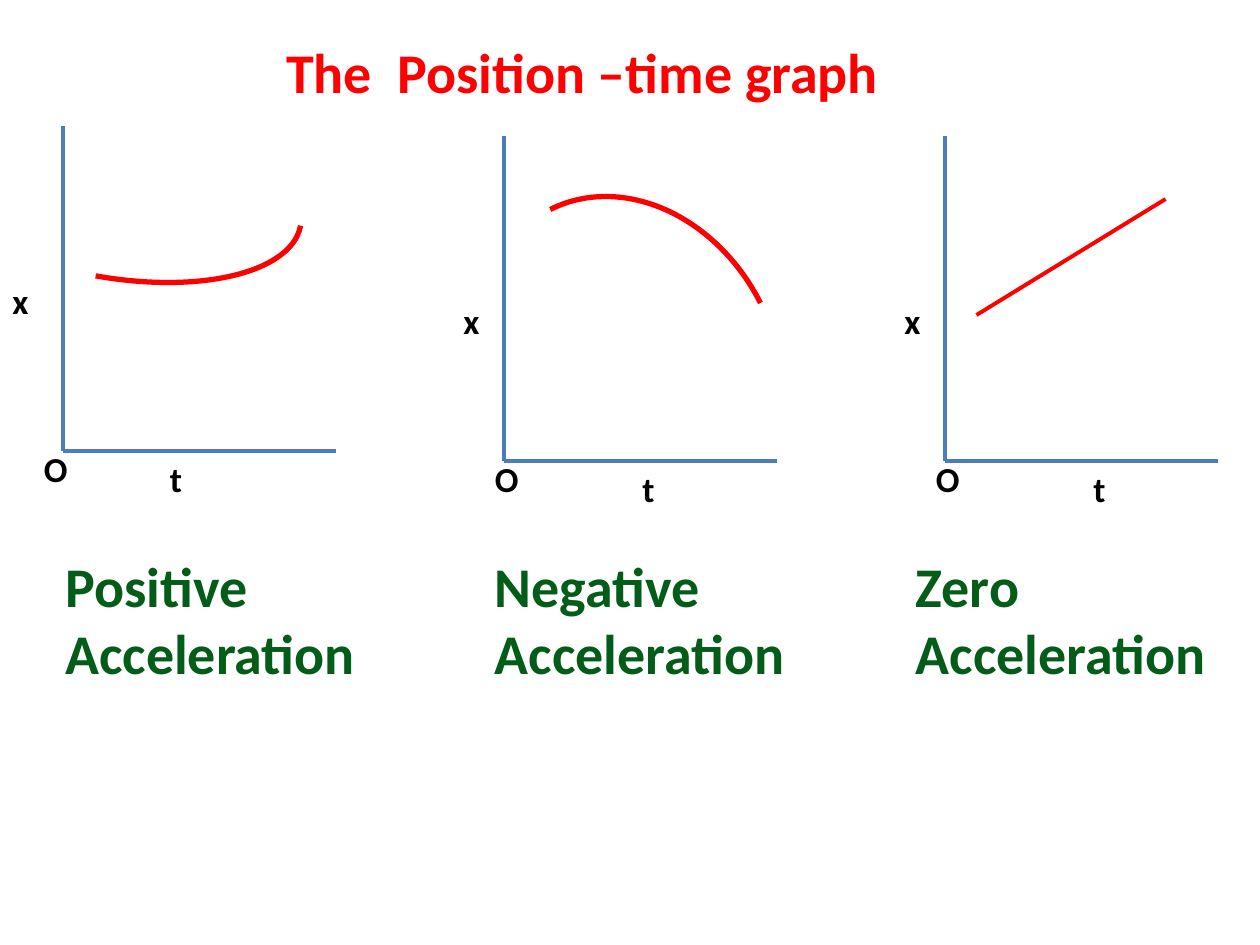
from pptx import Presentation
from pptx import util as u
from pptx.dml.color import RGBColor
from pptx.enum import shapes, text
from pptx.oxml.ns import qn
from lxml import etree

Inches = u.Inches
RED = RGBColor(0xFF, 0x00, 0x00)
BLUE = RGBColor(0x4A, 0x7D, 0xBA)
GREEN = RGBColor(0x03, 0x5D, 0x18)
BLACK = RGBColor(0x00, 0x00, 0x00)
AXIS_WIDTH, AXIS_HEIGHT = 2.17, 2.58


def write(shape, content, size=20, color=BLACK, wrap=False):
    """Fill a shape with bold left-aligned text, one paragraph per line."""
    frame = shape.text_frame
    frame.text = content
    frame.word_wrap = wrap
    frame.auto_size = text.MSO_AUTO_SIZE.NONE
    frame.vertical_anchor = text.MSO_ANCHOR.TOP
    for paragraph in frame.paragraphs:
        paragraph.alignment = text.PP_ALIGN.LEFT
        font = paragraph.font
        font.name, font.size, font.bold = "Calibri", u.Pt(size), True
        font.color.rgb = color


def add_text(slide, left, top, width, height, content, **style):
    box = slide.shapes.add_textbox(*map(Inches, (left, top, width, height)))
    write(box, content, **style)


def add_line(parent, start, end, color):
    line = parent.shapes.add_connector(
        shapes.MSO_CONNECTOR.STRAIGHT, *map(Inches, (*start, *end)))
    line.line.color.rgb = color
    line.line.width = u.Pt(2.25)
    etree.SubElement(line._element.spPr, qn("a:effectLst"))


def add_curve(slide, left, top, width, height, rotation):
    """Draw a mirrored quarter arc, turned by the given degrees."""
    arc = slide.shapes.add_shape(
        shapes.MSO_SHAPE.ARC, *map(Inches, (left, top, width, height)))
    arc.rotation = rotation
    arc._element.spPr.find(qn("a:xfrm")).set("flipH", "1")
    arc.shadow.inherit = False
    arc.fill.background()
    arc.line.color.rgb = RED
    arc.line.width = u.Pt(3)


def add_title(slide):
    title = slide.shapes.title
    title.left, title.top = Inches(2.17), Inches(0.25)
    title.width, title.height = Inches(5.08), Inches(0.64)
    write(title, "The  Position –time graph", size=32, color=RED, wrap=True)


def add_axes(slide, left, top, x_label, t_label):
    """Draw both axes and their labels; label places are offsets from the corner."""
    origin = (left, top + AXIS_HEIGHT)
    axes = slide.shapes.add_group_shape()
    add_line(axes, (left, top), origin, BLUE)
    add_line(axes, (left + AXIS_WIDTH, origin[1]), origin, BLUE)
    add_text(slide, left + x_label[0], top + x_label[1], 0.33, 0.44, "x")
    add_text(slide, left + t_label, origin[1], 0.3, 0.44, "t")
    add_text(slide, left + x_label[0] + 0.25, origin[1] - 0.08, 0.39, 0.44, "O")


def add_caption(slide, left, width, content):
    add_text(slide, left, 4.33, width, 1.18, content,
             size=32, color=GREEN, wrap=True)


def positive_graph(slide, left, top):
    add_axes(slide, left, top, (-0.5, 1.17), 0.75)
    add_curve(slide, left - 1.15, top - 0.16, 3.06, 1.36, 190.2)
    add_caption(slide, left - 0.08, 2.58, "Positive\nAcceleration")


def negative_graph(slide, left, top):
    add_axes(slide, left, top, (-0.42, 1.25), 1)
    add_curve(slide, left - 0.41, top + 0.69, 2.83, 2.31, 63.2)
    add_caption(slide, left - 0.17, 2.58, "Negative\nAcceleration")


def zero_graph(slide, left, top):
    add_axes(slide, left, top, (-0.42, 1.25), 1.08)
    add_line(slide, (left + 0.25, top + 1.42), (left + 1.75, top + 0.5), RED)
    add_caption(slide, left - 0.33, 2.83, "Zero  Acceleration")


def main():
    presentation = Presentation()
    presentation.slide_width, presentation.slide_height = Inches(10), Inches(7.5)
    slide = presentation.slides.add_slide(presentation.slide_layouts[5])
    add_title(slide)
    positive_graph(slide, 0.5, 1)
    negative_graph(slide, 4, 1.08)
    zero_graph(slide, 7.5, 1.08)
    presentation.save("out.pptx")


if __name__ == "__main__":
    main()
